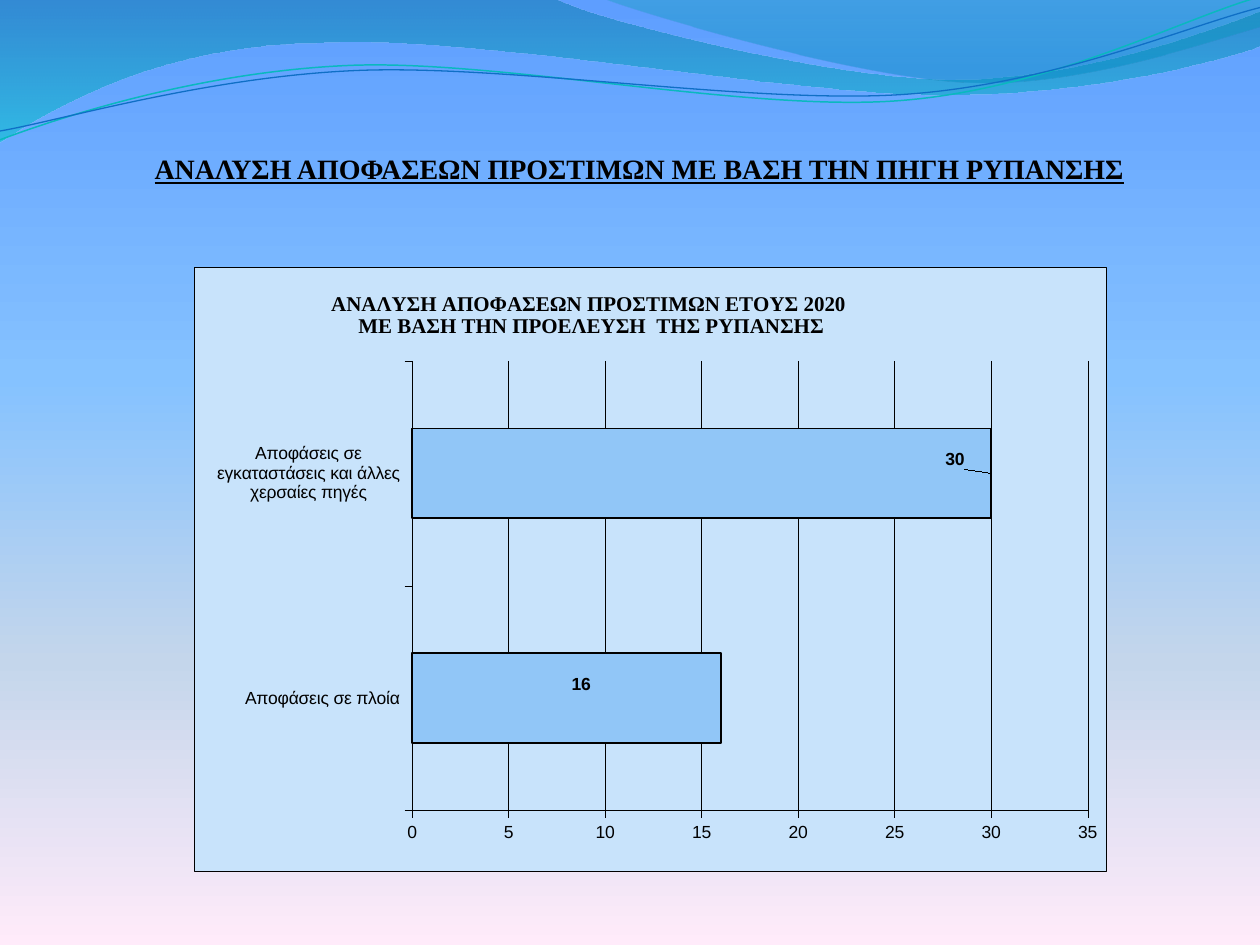
from dataclasses import dataclass

from lxml import etree
from pptx import Presentation
from pptx.chart.data import CategoryChartData
from pptx.dml.color import RGBColor
from pptx.enum.chart import XL_CHART_TYPE, XL_LABEL_POSITION, XL_TICK_LABEL_POSITION, XL_TICK_MARK
from pptx.enum.text import MSO_ANCHOR, PP_ALIGN
from pptx.oxml import parse_xml
from pptx.oxml.ns import nsdecls, qn
from pptx.util import Inches, Pt

BAR = XL_CHART_TYPE.BAR_CLUSTERED
LABEL_CENTER = XL_LABEL_POSITION.CENTER
LABEL_INSIDE_END = XL_LABEL_POSITION.INSIDE_END
LABELS_LOW = XL_TICK_LABEL_POSITION.LOW
TICK_OUTSIDE = XL_TICK_MARK.OUTSIDE
ANCHOR_BOTTOM = MSO_ANCHOR.BOTTOM
ALIGN_CENTER = PP_ALIGN.CENTER
CELL = Inches(1)


@dataclass(frozen=True)
class Theme:
    """Colours, fonts and sizes of the slide."""
    ink: str = "000000"
    panel: str = "C8E3FB"
    bar: str = "91C6F7"
    teal_line: str = "0AB8BF"
    blue_line: str = "0F6FC6"
    sky: tuple = ((0, "5E9EFF", 100), (40, "85C2FF", 100), (70, "C4D6EB", 100), (100, "FFEBFA", 100))
    wide_wave: tuple = ((0, "0074A1", 45), (100, "00C6CF", 55))
    right_wave: tuple = ((0, "00A1A9", 30), (80, "008BBF", 45))
    heading_font: str = "Times New Roman"
    chart_font: str = "Arial"
    title_size: float = 16
    chart_title_size: float = 12
    chart_size: float = 10
    hairline: float = 0.25


@dataclass(frozen=True)
class Box:
    """A region in columns and rows of the 10 by 7.5 grid."""
    left: float
    top: float
    width: float
    height: float

    def lengths(self):
        """Return the region as slide lengths."""
        return [round(value * CELL) for value in (self.left, self.top, self.width, self.height)]


THEME = Theme()
WIDE_WAVE = (
    (0, -0.01), (4.4, -0.01),
    (4.76, 0.17, 6.64, 0.63, 7.58, 0.63), (8.53, 0.63, 9.58, 0.26, 10, 0.09), (10.01, 0.36),
    (9.83, 0.44, 8.7, 0.76, 7.46, 0.75), (6.22, 0.75, 3.82, 0.28, 2.57, 0.34),
    (1.29, 0.35, 0.46, 0.83, -0.01, 1.13),
)
RIGHT_WAVE = (
    (4.79, -0.01), (5.09, 0.11, 6.82, 0.62, 7.69, 0.65), (8.56, 0.69, 9.61, 0.32, 10, 0.21), (10, 0),
)
TEAL_CURVE = (
    (0, 1.11), (0.48, 0.93, 1.58, 0.57, 2.77, 0.52), (3.95, 0.47, 5.93, 0.89, 7.13, 0.8),
    (8.33, 0.71, 9.38, 0.15, 9.98, -0.02),
)
BLUE_CURVE = (
    (0, 1.04), (0.47, 0.96, 1.64, 0.61, 2.83, 0.56), (4.03, 0.51, 5.97, 0.83, 7.17, 0.75),
    (8.36, 0.67, 9.41, 0.21, 10, 0.06),
)


def set_gradient(fill, element, stops):
    """Give a fill a downward gradient of (position, colour, opacity) stops."""
    fill.gradient()
    fill.gradient_angle = 270
    stop_list = element.find(".//" + qn("a:gsLst"))
    stop_list.clear()
    for position, color, opacity in stops:
        stop = etree.SubElement(stop_list, qn("a:gs"), pos=str(position * 1000))
        shade = etree.SubElement(stop, qn("a:srgbClr"), val=color)
        if opacity < 100:
            etree.SubElement(shade, qn("a:alpha"), val=str(opacity * 1000))


def set_line(line, width, color=THEME.ink):
    """Give a line its width and colour."""
    line.width = Pt(width)
    line.color.rgb = RGBColor.from_string(color)


def set_font(font, size, name, bold=False, underline=False):
    """Give a font its size, face and weight."""
    font.size, font.name = Pt(size), name
    font.bold, font.underline = bold, underline
    font.color.rgb = RGBColor.from_string(THEME.ink)


def add_outline(slide, box, segments, closed):
    """Draw straight and cubic segments measured from the corner of the box."""
    ends = [(round((box.left + segment[-2]) * CELL), round((box.top + segment[-1]) * CELL))
            for segment in segments]
    builder = slide.shapes.build_freeform(*ends[0])
    builder.add_line_segments(ends[1:], close=closed)
    shape = builder.convert_to_shape()
    shape.shadow.inherit = False
    for segment, straight in zip(segments[1:], list(shape.element.iter(qn("a:lnTo")))):
        if len(segment) == 2:
            continue
        curve = etree.Element(qn("a:cubicBezTo"))
        for x, y in zip(segment[::2], segment[1::2]):
            etree.SubElement(curve, qn("a:pt"), x=str(round((box.left + x) * CELL) - shape.left),
                             y=str(round((box.top + y) * CELL) - shape.top))
        straight.getparent().replace(straight, curve)
    return shape


def add_waves(slide, box):
    """Draw the two filled waves and the two thin curves."""
    for segments, stops in ((WIDE_WAVE, THEME.wide_wave), (RIGHT_WAVE, THEME.right_wave)):
        shape = add_outline(slide, box, segments, True)
        set_gradient(shape.fill, shape.element, stops)
        shape.line.fill.background()
    for segments, color, width in ((TEAL_CURVE, THEME.teal_line, 0.85), (BLUE_CURVE, THEME.blue_line, 0.75)):
        shape = add_outline(slide, box, segments, False)
        shape.fill.background()
        set_line(shape.line, width, color)


def add_title(slide, box, text, **font_format):
    """Place the centred heading at the bottom of its box."""
    frame = slide.shapes.add_textbox(*box.lengths()).text_frame
    frame.word_wrap = True
    frame.vertical_anchor = ANCHOR_BOTTOM
    frame.margin_left = frame.margin_right = frame.margin_bottom = 0
    paragraph = frame.paragraphs[0]
    paragraph.alignment = ALIGN_CENTER
    run = paragraph.add_run()
    run.text = text
    set_font(run.font, **font_format)


def set_layout(parent, index, modes, **percents):
    """Fix a chart part at percentages of the chart's size."""
    for layout in parent.findall(qn("c:layout")):
        parent.remove(layout)
    layout = etree.Element(qn("c:layout"))
    manual = etree.SubElement(layout, qn("c:manualLayout"))
    for name, value in modes.items():
        etree.SubElement(manual, qn(f"c:{name}"), val=value)
    for name, value in percents.items():
        etree.SubElement(manual, qn(f"c:{name}"), val=f"{value / 100:.4f}")
    parent.insert(index, layout)


def style_axis(axis):
    """Give an axis its line, ticks and font."""
    axis.major_tick_mark = TICK_OUTSIDE
    set_line(axis.format.line, THEME.hairline)
    set_font(axis.tick_labels.font, THEME.chart_size, THEME.chart_font)


def style_series(plot):
    """Colour the bars and place their values."""
    plot.gap_width = 150
    plot.vary_by_categories = False
    series = plot.series[0]
    series.format.fill.solid()
    series.format.fill.fore_color.rgb = RGBColor.from_string(THEME.bar)
    set_line(series.format.line, 1)
    labels = series.data_labels
    labels.show_value = True
    labels.number_format, labels.number_format_is_linked = "#,##0", False
    set_font(labels.font, THEME.chart_size, THEME.chart_font, bold=True)
    placements = ((LABEL_CENTER, 1.6), (LABEL_INSIDE_END, -2.4))
    for index, (position, shift) in enumerate(placements):
        label = series.points[index].data_label
        set_font(label.font, THEME.chart_size, THEME.chart_font, bold=True)
        label.position = position
        element = list(plot.chart.element.iter(qn("c:dLbl")))[index]
        set_layout(element, 1, {}, x=shift, y=-2.3)


def add_fines_chart(slide, box, title_lines, values):
    """Place the bar chart of decisions by source of pollution."""
    data = CategoryChartData(number_format="#,##0")
    data.categories = values.keys()
    data.add_series("Series 1", values.values())
    chart = slide.shapes.add_chart(BAR, *box.lengths(), data).chart
    chart.has_legend = False
    set_font(chart.font, THEME.chart_size, THEME.chart_font)
    frame = chart.chart_title.text_frame
    frame.text = "\n".join(title_lines)
    for paragraph in frame.paragraphs:
        paragraph.alignment = ALIGN_CENTER
        set_font(paragraph.runs[0].font, THEME.chart_title_size, THEME.heading_font, bold=True)
    chart.chart_title.include_in_layout = False
    style_axis(chart.category_axis)
    style_axis(chart.value_axis)
    chart.category_axis.tick_label_position = LABELS_LOW
    set_line(chart.value_axis.major_gridlines.format.line, THEME.hairline)
    style_series(chart.plots[0])
    root = chart.element
    edges = {"xMode": "edge", "yMode": "edge"}
    set_layout(root.find(".//" + qn("c:title")), 1, edges, x=14.6, y=3.2)
    set_layout(root.find(".//" + qn("c:plotArea")), 0, {"layoutTarget": "inner", **edges},
               x=23.9, y=15.5, w=74.1, h=74.4)
    root.find(qn("c:chart")).addnext(parse_xml(
        f'<c:spPr {nsdecls("c", "a")}><a:solidFill><a:srgbClr val="{THEME.panel}"/></a:solidFill>'
        f'<a:ln w="{Pt(THEME.hairline)}"><a:solidFill><a:srgbClr val="{THEME.ink}"/></a:solidFill></a:ln></c:spPr>'))


def main():
    """Build and save the slide."""
    presentation = Presentation()
    presentation.slide_width, presentation.slide_height = 10 * CELL, round(7.5 * CELL)
    slide = presentation.slides.add_slide(presentation.slide_layouts[6])
    set_gradient(slide.background.fill, slide.element, THEME.sky)
    add_waves(slide, Box(0, 0, 10, 1.13))
    add_title(slide, Box(1.14, 0.77, 7.87, 0.7), "ΑΝΑΛΥΣΗ ΑΠΟΦΑΣΕΩΝ ΠΡΟΣΤΙΜΩΝ ΜΕ ΒΑΣΗ ΤΗΝ ΠΗΓΗ ΡΥΠΑΝΣΗΣ",
              size=THEME.title_size, name=THEME.heading_font, bold=True, underline=True)
    add_fines_chart(slide, Box(1.54, 2.12, 7.24, 4.8),
                    ("ΑΝΑΛΥΣΗ ΑΠΟΦΑΣΕΩΝ ΠΡΟΣΤΙΜΩΝ ΕΤΟΥΣ 2020", " ΜΕ ΒΑΣΗ ΤΗΝ ΠΡΟΕΛΕΥΣΗ  ΤΗΣ ΡΥΠΑΝΣΗΣ"),
                    {"Αποφάσεις σε πλοία": 16, "Αποφάσεις σε εγκαταστάσεις και άλλες χερσαίες πηγές": 30})
    presentation.save("out.pptx")


if __name__ == "__main__":
    main()
